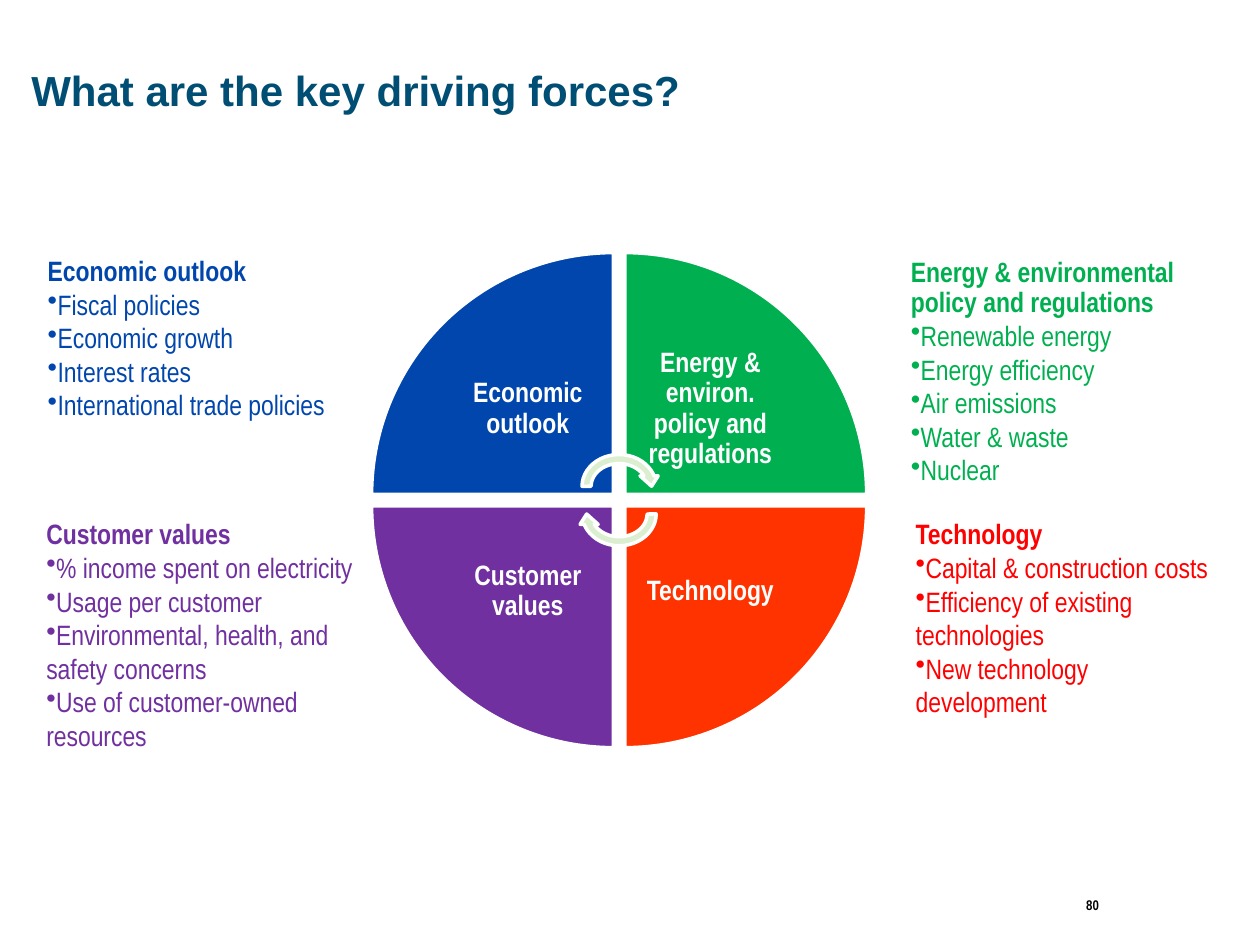
from lxml.etree import SubElement
from pptx import Presentation
from pptx.dml.color import RGBColor
from pptx.enum.shapes import MSO_SHAPE as Shape
from pptx.enum.text import MSO_ANCHOR as Anchor, PP_ALIGN as Align
from pptx.oxml.ns import qn
from pptx.util import Pt

COLORS = {"title": "004E74", "black": "000000", "white": "FFFFFF", "blue": "0046AD",
          "green": "00B050", "orange": "FF3300", "red": "FF0000", "purple": "7030A0",
          "arrow": "DCEED0"}
NARROW = "Arial Narrow"

# Clockwise from top left: label, column, row, colour
WEDGES = [
    ("Economic outlook", 0, 0, "blue"),
    ("Energy & environ. policy and regulations", 1, 0, "green"),
    ("Technology", 1, 1, "orange"),
    ("Customer values", 0, 1, "purple"),
]
# Heading, bullets, colour, (left, top, width, height)
LISTS = [
    ("Economic outlook",
     ["Fiscal policies", "Economic growth", "Interest rates", "International trade policies"],
     "blue", (20.2, 143.3, 180, 126)),
    ("Energy & environmental policy and regulations",
     ["Renewable energy", "Energy efficiency", "Air emissions", "Water & waste", "Nuclear"],
     "green", (513.4, 144, 183, 126)),
    ("Customer values",
     ["% income spent on electricity", "Usage per customer",
      "Environmental, health, and safety concerns", "Use of customer-owned resources"],
     "purple", (19.4, 293.8, 198.7, 126)),
    ("Technology",
     ["Capital & construction costs", "Efficiency of existing technologies",
      "New technology development"],
     "red", (516.2, 293.8, 187.2, 94.3)),
]

CENTER_X, CENTER_Y = 353.8, 285.8
WEDGE, GAP, LABEL = 138.2, 6.5, 97.8
ARROW_W, ARROW_H, ARROW_SHIFT = 47.5, 41.5, 7.9


def color(name):
    return RGBColor.from_string(COLORS[name])


def style(para, size, color_name, bold=True, name=NARROW, spacing=None, align=None):
    para.font.name, para.font.size, para.font.bold = name, Pt(size), bold
    para.font.color.rgb = color(color_name)
    para.line_spacing, para.alignment = spacing, align


def add_box(page, frame, text, anchor=Anchor.TOP, inset=None, **look):
    box = page.shapes.add_textbox(*map(Pt, frame))
    words = box.text_frame
    words.word_wrap, words.vertical_anchor = True, anchor
    if inset is not None:
        words.margin_left = words.margin_right = Pt(inset)
        words.margin_top = words.margin_bottom = Pt(inset)
    words.text = text
    style(words.paragraphs[0], **look)
    return box


def add_bullet(box, text, color_name):
    para = box.text_frame.add_paragraph()
    para.text = text
    SubElement(para._p.get_or_add_pPr(), qn("a:buChar")).set("char", "•")
    style(para, 16, color_name, bold=False)


def add_outlined(page, kind, frame, fill, rotation):
    shape = page.shapes.add_shape(kind, *map(Pt, frame))
    shape.shadow.inherit = False
    shape.fill.solid()
    shape.fill.fore_color.rgb = color(fill)
    shape.line.color.rgb = color("white")
    shape.line.width = Pt(2)
    shape.rotation = rotation


def quadrant(column, row, size):
    """Square of the given size touching the inner corner of a quadrant."""
    left = CENTER_X + (GAP / 2 if column else -GAP / 2 - size)
    top = CENTER_Y + (GAP / 2 if row else -GAP / 2 - size)
    return left, top, size, size


def main():
    deck = Presentation()
    deck.slide_width, deck.slide_height = Pt(720), Pt(540)
    page = deck.slides.add_slide(deck.slide_layouts[6])

    add_box(page, (10.8, 13.7, 455, 79.2), "What are the key driving forces?", Anchor.MIDDLE,
            size=24, color_name="title", name="Arial", spacing=0.85)
    add_box(page, (524.9, 509, 110.2, 31), "80", size=8, color_name="black", align=Align.RIGHT)

    for turn, (label, column, row, fill) in enumerate(WEDGES):
        add_outlined(page, Shape.PIE_WEDGE, quadrant(column, row, WEDGE), fill, 90 * turn)
        add_box(page, quadrant(column, row, LABEL), label, Anchor.MIDDLE, 8.6,
                size=16, color_name="white", spacing=0.9, align=Align.CENTER)

    for side, rotation in ((-1, 0), (1, 180)):
        top = CENTER_Y + side * ARROW_SHIFT - ARROW_H / 2
        add_outlined(page, Shape.CIRCULAR_ARROW,
                     (CENTER_X - ARROW_W / 2, top, ARROW_W, ARROW_H), "arrow", rotation)

    for heading, bullets, color_name, frame in LISTS:
        box = add_box(page, frame, heading, size=16, color_name=color_name, spacing=0.9)
        for bullet in bullets:
            add_bullet(box, bullet, color_name)

    deck.save("out.pptx")


if __name__ == "__main__":
    main()
